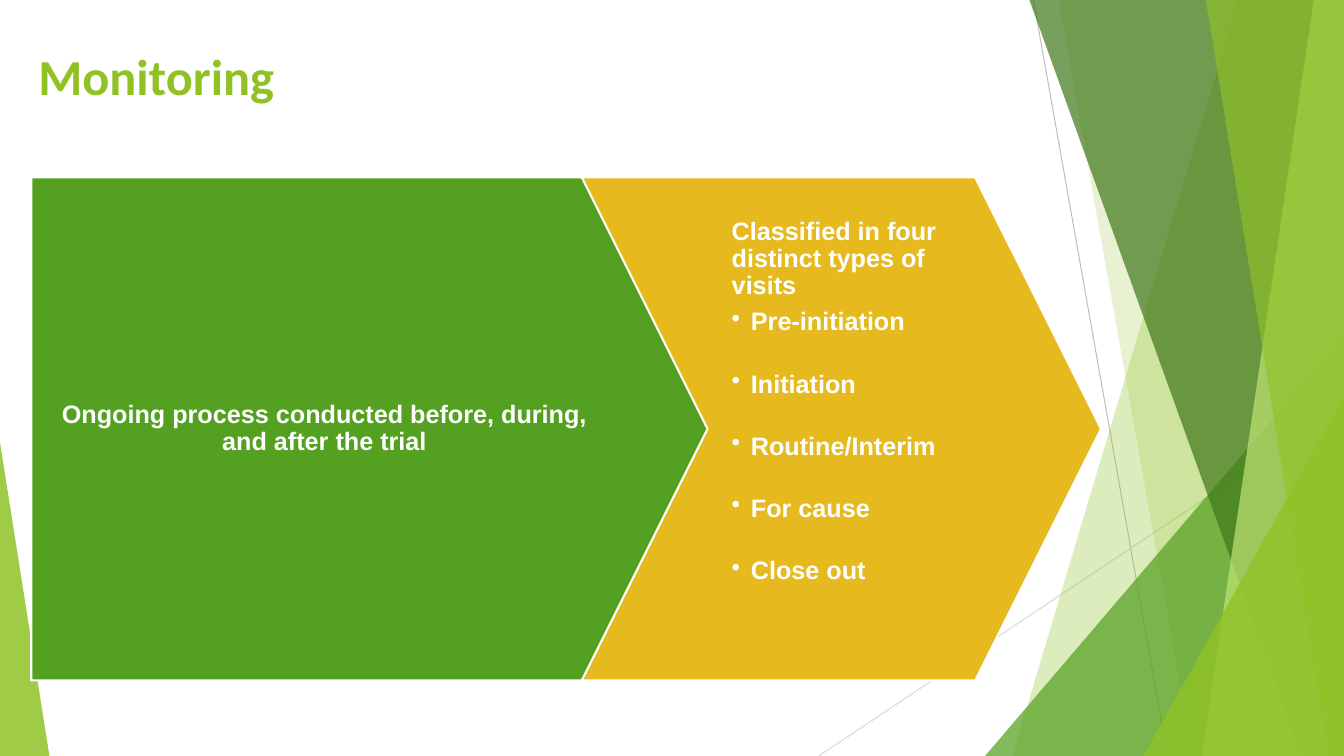
from typing import NamedTuple

from lxml.etree import SubElement
from pptx import Presentation
from pptx.dml.color import RGBColor
from pptx.enum.shapes import MSO_CONNECTOR, MSO_SHAPE
from pptx.enum.text import MSO_ANCHOR, PP_ALIGN
from pptx.oxml.ns import qn
from pptx.util import Pt

PX = 9144  # one hundredth of an inch
WIDTH, HEIGHT = 1333, 750

LIME = RGBColor(0x90, 0xC2, 0x26)
GREEN = RGBColor(0x54, 0xA0, 0x21)
DARK_GREEN = RGBColor(0x3F, 0x78, 0x19)
PALE_LIME = RGBColor(0xC0, 0xE4, 0x74)
GOLD = RGBColor(0xE6, 0xB9, 0x1E)
WHITE = RGBColor(0xFF, 0xFF, 0xFF)
GREY = RGBColor(0xBF, 0xBF, 0xBF)
LIGHT_GREY = RGBColor(0xD9, 0xD9, 0xD9)


class Ray(NamedTuple):
    start: tuple[int, int]
    end: tuple[int, int]
    color: RGBColor


class Facet(NamedTuple):
    points: list[tuple[int, int]]
    color: RGBColor
    opacity: int


class Arrow(NamedTuple):
    kind: MSO_SHAPE
    left: int
    width: int
    color: RGBColor
    insets: tuple[int, int, int]  # left, top, right
    anchor: MSO_ANCHOR


def to_right_edge(top_x: int, bottom_x: int) -> list[tuple[int, int]]:
    return [(top_x, 0), (WIDTH, 0), (WIDTH, HEIGHT), (bottom_x, HEIGHT)]


def corner(edge_x: int, top: int, tip_x: int) -> list[tuple[int, int]]:
    return [(edge_x, top), (edge_x, HEIGHT), (tip_x, HEIGHT)]


RAYS = [
    Ray((1025, 0), (1158, HEIGHT), GREY),
    Ray((WIDTH, 403), (812, HEIGHT), LIGHT_GREY),
]
FACETS = [
    Facet(to_right_edge(1228, 1004), LIME, 30),
    Facet(to_right_edge(1050, 1183), LIME, 20),
    Facet(corner(WIDTH, 333, 977), GREEN, 72),
    Facet(to_right_edge(1021, 1291), DARK_GREEN, 70),
    Facet(to_right_edge(1303, 1192), PALE_LIME, 70),
    Facet(to_right_edge(1196, 1318), LIME, 65),
    Facet(corner(WIDTH, 393, 1134), LIME, 80),
    Facet(corner(0, 439, 49), LIME, 85),
]
ARROW_TOP, ARROW_HEIGHT = 176, 499
PROCESS = Arrow(MSO_SHAPE.PENTAGON, 31, 686, GREEN, (24, 5, 66), MSO_ANCHOR.MIDDLE)
VISITS = Arrow(MSO_SHAPE.CHEVRON, 577, 515, GOLD, (24, 41, 24), MSO_ANCHOR.TOP)
VISIT_TYPES = ["Pre-initiation", "Initiation", "Routine/Interim", "For cause", "Close out"]


def draw_ray(page, ray: Ray) -> None:
    ends = [value * PX for value in ray.start + ray.end]
    line = page.shapes.add_connector(MSO_CONNECTOR.STRAIGHT, *ends)
    line.line.color.rgb = ray.color
    line.line.width = Pt(0.75)
    SubElement(line._element.spPr, qn("a:effectLst"))


def draw_facet(page, facet: Facet) -> None:
    outline = page.shapes.build_freeform(*facet.points[0], scale=PX)
    outline.add_line_segments(facet.points[1:], close=True)
    shape = outline.convert_to_shape()
    shape.shadow.inherit = False
    shape.line.fill.background()
    shape.fill.solid()
    shape.fill.fore_color.rgb = facet.color
    color = shape._element.spPr.find(qn("a:solidFill"))[0]
    SubElement(color, qn("a:alpha"), val=str(facet.opacity * 1000))


def draw_arrow(page, arrow: Arrow):
    shape = page.shapes.add_shape(
        arrow.kind, arrow.left * PX, ARROW_TOP * PX, arrow.width * PX, ARROW_HEIGHT * PX
    )
    shape.adjustments[0] = 0.25
    shape.shadow.inherit = False
    shape.fill.solid()
    shape.fill.fore_color.rgb = arrow.color
    shape.line.color.rgb = WHITE
    shape.line.width = Pt(1.5)
    frame = shape.text_frame
    frame.word_wrap = True
    frame.vertical_anchor = arrow.anchor
    frame.margin_left, frame.margin_top, frame.margin_right = (
        inset * PX for inset in arrow.insets
    )
    frame.margin_bottom = 5 * PX
    return frame


def write(para, text: str, align: PP_ALIGN, after: float, bullet: bool = False) -> None:
    para.text = text
    para.alignment = align
    para.line_spacing = 0.9
    para.space_after = Pt(after)
    if bullet:
        properties = para._p.get_or_add_pPr()
        properties.set("marL", str(19 * PX))
        properties.set("indent", str(-19 * PX))
        SubElement(properties, qn("a:buChar"), char="•")
    para.font.name = "Arial"
    para.font.size = Pt(18)
    para.font.bold = True
    para.font.color.rgb = WHITE


def main() -> None:
    deck = Presentation()
    deck.slide_width, deck.slide_height = WIDTH * PX, HEIGHT * PX
    page = deck.slides.add_slide(deck.slide_layouts[5])

    # Background facets
    for ray in RAYS:
        draw_ray(page, ray)
    for facet in FACETS:
        draw_facet(page, facet)

    # Title
    title = page.shapes.title
    title.left, title.top, title.width, title.height = 28 * PX, 40 * PX, 940 * PX, 89 * PX
    title.text_frame.vertical_anchor = MSO_ANCHOR.TOP
    para = title.text_frame.paragraphs[0]
    para.text = "Monitoring"
    para.alignment = PP_ALIGN.LEFT
    para.font.name = "Calibri"
    para.font.size = Pt(36)
    para.font.bold = True
    para.font.color.rgb = LIME

    # Process arrow
    process = draw_arrow(page, PROCESS)
    write(
        process.paragraphs[0],
        "Ongoing process conducted before, during, and after the trial",
        PP_ALIGN.CENTER,
        0,
    )

    # Visit types arrow
    visits = draw_arrow(page, VISITS)
    write(visits.paragraphs[0], "Classified in four distinct types of visits", PP_ALIGN.LEFT, 6.3)
    for visit in VISIT_TYPES:
        write(visits.add_paragraph(), visit, PP_ALIGN.LEFT, 25, bullet=True)

    deck.save("out.pptx")


if __name__ == "__main__":
    main()
